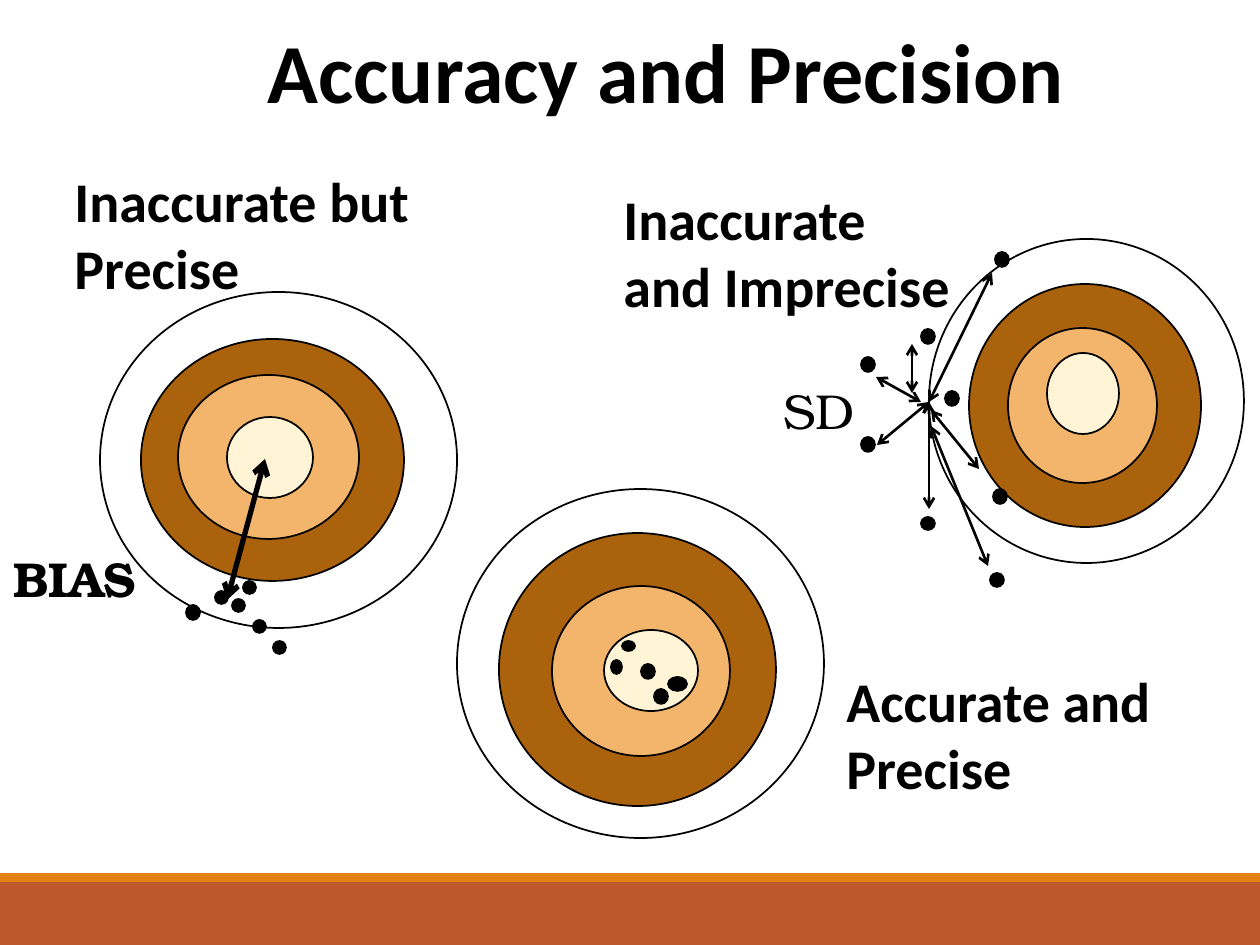
"""Build the accuracy and precision slide with three targets."""
from lxml import etree
from pptx import Presentation
from pptx.dml.color import RGBColor
from pptx.enum.shapes import MSO_CONNECTOR, MSO_SHAPE
from pptx.enum.text import MSO_AUTO_SIZE
from pptx.oxml.ns import qn
from pptx.util import Pt

PX = 914400 / 126
RECTANGLE = MSO_SHAPE.RECTANGLE
OVAL = MSO_SHAPE.OVAL
STRAIGHT = MSO_CONNECTOR.STRAIGHT
FIT_SHAPE = MSO_AUTO_SIZE.SHAPE_TO_FIT_TEXT
BLACK = RGBColor(0x00, 0x00, 0x00)
WHITE = RGBColor(0xFF, 0xFF, 0xFF)
BROWN = RGBColor(0xAB, 0x62, 0x0D)
SAND = RGBColor(0xF3, 0xB5, 0x6C)
CREAM = RGBColor(0xFF, 0xF4, 0xD5)
RUST = RGBColor(0xBD, 0x58, 0x2C)
ORANGE = RGBColor(0xE4, 0x83, 0x12)
RING_COLORS = (WHITE, BROWN, SAND, CREAM)

prs = Presentation()
prs.slide_width = round(1260 * PX)
prs.slide_height = round(945 * PX)
slide = prs.slides.add_slide(prs.slide_layouts[6])


def add_figure(kind, box, fill, outline=None):
    figure = slide.shapes.add_shape(kind, *(round(v * PX) for v in box))
    figure.shadow.inherit = False
    figure.fill.solid()
    figure.fill.fore_color.rgb = fill
    if outline is None:
        figure.line.fill.background()
    else:
        figure.line.color.rgb = outline
        figure.line.width = Pt(1)


def add_text(text, box, size=32, font="Calibri", bold=True, wrap=True, inset=True):
    label = slide.shapes.add_textbox(*(round(v * PX) for v in box))
    frame = label.text_frame
    frame.word_wrap = wrap
    frame.auto_size = FIT_SHAPE
    if not inset:
        frame.margin_left = frame.margin_right = 0
        frame.margin_top = frame.margin_bottom = 0
    run = frame.paragraphs[0].add_run()
    run.text = text
    run.font.name = font
    run.font.size = Pt(size)
    run.font.bold = bold
    run.font.color.rgb = BLACK


add_figure(RECTANGLE, (0, 882, 1260, 63), RUST)
add_figure(RECTANGLE, (0, 873, 1260, 9), ORANGE)

biased_rings = [(100, 292, 357, 336), (141, 339, 263, 242),
                (178, 375, 181, 164), (227, 417, 86, 81)]
accurate_rings = [(457, 489, 367, 349), (499, 533, 277, 273),
                  (552, 586, 178, 170), (604, 630, 94, 81)]
imprecise_rings = [(929, 239, 315, 324), (969, 284, 232, 243),
                   (1008, 328, 149, 155), (1047, 353, 72, 81)]
for rings in (biased_rings, accurate_rings, imprecise_rings):
    for ring, color in zip(rings, RING_COLORS):
        add_figure(OVAL, ring, color, BLACK)

biased_hits = [(186, 605, 14, 15), (215, 591, 13, 13), (243, 581, 13, 13),
               (232, 599, 13, 13), (253, 620, 13, 13), (273, 641, 13, 13)]
accurate_hits = [(641, 664, 14, 15), (654, 689, 14, 15), (668, 677, 19, 14),
                 (622, 641, 13, 10), (611, 660, 11, 14)]
imprecise_hits = [(861, 437, 14, 15), (993, 489, 14, 15), (921, 329, 14, 15),
                  (995, 252, 14, 15), (945, 391, 14, 15), (861, 357, 14, 15),
                  (921, 517, 14, 13), (990, 573, 14, 14)]
for hit in biased_hits + accurate_hits + imprecise_hits:
    add_figure(OVAL, hit, BLACK, BLACK)

add_text("Accuracy and Precision", (268, 20, 805, 102), size=48, wrap=False, inset=False)
add_text("Inaccurate but Precise", (62, 160, 462, 149))
add_text("Inaccurate and Imprecise", (611, 178, 359, 149))
add_text("Accurate and Precise", (834, 660, 484, 149))
add_text("BIAS", (1, 542, 164, 72), size=28, font="TeX Gyre Bonum")
add_text("SD", (771, 374, 112, 72), size=28, font="TeX Gyre Bonum", bold=False)

bias_arrow = (265, 459, 227, 600, 3)
deviation_arrows = [(931, 410, 979, 469, 1.5), (912, 344, 912, 393, 1.5),
                    (876, 377, 921, 402, 1.5), (929, 402, 929, 509, 1.5),
                    (929, 402, 877, 445, 1.5), (992, 273, 929, 402, 1.5),
                    (931, 426, 988, 566, 1.5)]
for *ends, weight in [bias_arrow] + deviation_arrows:
    arrow = slide.shapes.add_connector(STRAIGHT, *(round(v * PX) for v in ends))
    arrow.line.color.rgb = BLACK
    arrow.line.width = Pt(weight)
    properties = arrow.element.spPr
    outline = properties.find(qn("a:ln"))
    for tip in ("a:headEnd", "a:tailEnd"):
        etree.SubElement(outline, qn(tip), type="arrow")
    etree.SubElement(properties, qn("a:effectLst"))

prs.save("out.pptx")
